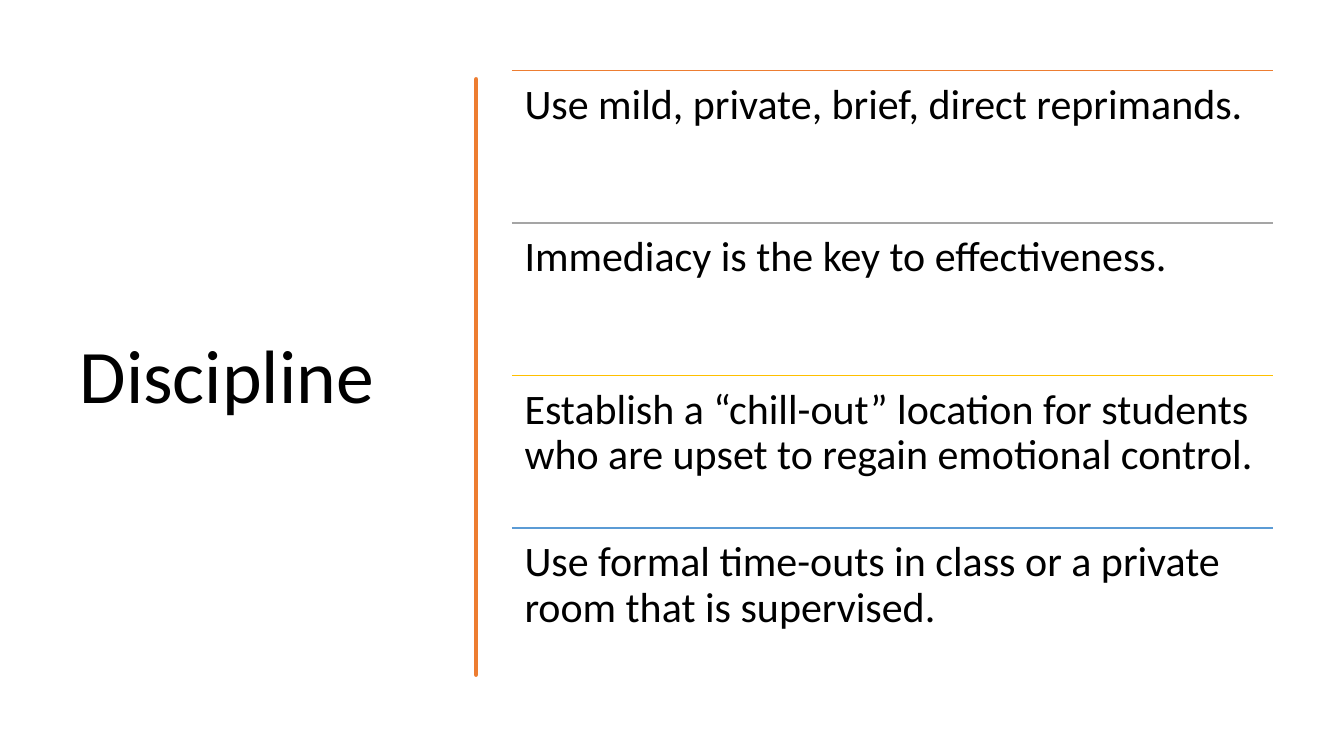
from lxml import etree
from pptx import Presentation
from pptx.dml.color import RGBColor
from pptx.enum.shapes import MSO_CONNECTOR
from pptx.enum.text import MSO_ANCHOR, MSO_AUTO_SIZE, PP_ALIGN
from pptx.oxml.ns import qn
from pptx.util import Cm, Pt

LEFT, TOP, MIDDLE = PP_ALIGN.LEFT, MSO_ANCHOR.TOP, MSO_ANCHOR.MIDDLE
STRAIGHT, NO_FIT = MSO_CONNECTOR.STRAIGHT, MSO_AUTO_SIZE.NONE

TITLE = "Discipline"
ORANGE = "ED7D31"
RULES = [
    (ORANGE, "Use mild, private, brief, direct reprimands."),
    ("A5A5A5", "Immediacy is the key to effectiveness."),
    ("FFC000", "Establish a “chill-out” location for students "
               "who are upset to regain emotional control."),
    ("5B9BD5", "Use formal time-outs in class or a private "
               "room that is supervised."),
]
ROW_X, ROW_Y, ROW_W, ROW_H = 12.9, 1.78, 19.18, 3.84

# Each bend in cm: two sideways pulls, their two heights, end height
STROKE_TOP, STROKE_END = 2.13, 17.17
RIGHT_X, LEFT_X = 12.06, 12.01
DOWN = [
    (0.05, 0.05, 2.59, 3.02, 3.71),
    (-0.05, 0.03, 4.39, 4.95, 5.74),
    (-0.03, 0, 6.53, 6.65, 7.47),
    (-0.03, 0.05, 8.26, 8.69, 9.04),
    (-0.05, 0.1, 9.4, 10.52, 11.07),
    (-0.1, -0.08, 11.61, 12.29, 12.95),
    (0.05, 0.05, 13.61, 14.33, 14.83),
    (-0.05, 0.03, 15.32, 16.51, STROKE_END),
]
UP = [
    (0.03, -0.05, 16.41, 16.36, 15.57),
    (0.03, 0.03, 14.81, 14.48, 14.15),
    (-0.03, -0.03, 13.82, 12.57, 12.12),
    (0, -0.05, 11.66, 11.3, 10.54),
    (0.03, -0.03, 9.8, 9.47, 8.51),
    (0.03, -0.03, 7.57, 7.14, 6.35),
    (0.03, 0.05, 5.54, 5.08, 4.6),
    (-0.08, 0.1, 4.14, 2.64, STROKE_TOP),
]
STEPS = 8


def color(code):
    return RGBColor.from_string(code)


def write(frame, text, size, anchor):
    frame.word_wrap = True
    frame.auto_size = NO_FIT
    frame.vertical_anchor = anchor
    para = frame.paragraphs[0]
    para.alignment = LEFT
    para.line_spacing = 0.9
    run = para.add_run()
    run.text = text
    run.font.name = "Calibri"
    run.font.size = Pt(size)
    run.font.color.rgb = color("000000")


def trace(x, y, bends):
    """Return points along the chained Bezier bends of one edge."""
    points = []
    for pull1, pull2, y1, y2, end in bends:
        for step in range(1, STEPS + 1):
            t = step / STEPS
            u = 1 - t
            a, b = 3 * u * u * t, 3 * u * t * t
            points.append((x + a * pull1 + b * pull2,
                           u ** 3 * y + a * y1 + b * y2 + t ** 3 * end))
        y = end
    return points


def add_stroke(shapes):
    pen = shapes.build_freeform(RIGHT_X, STROKE_TOP, scale=Cm(1))
    pen.add_line_segments(trace(RIGHT_X, STROKE_TOP, DOWN), close=False)
    pen.add_line_segments([(LEFT_X, STROKE_END)], close=False)
    pen.add_line_segments(trace(LEFT_X, STROKE_END, UP), close=True)
    stroke = pen.convert_to_shape()
    stroke.shadow.inherit = False
    stroke.fill.solid()
    stroke.fill.fore_color.rgb = color(ORANGE)
    stroke.line.color.rgb = color(ORANGE)
    stroke.line.width = Pt(3.25)


def add_rule(shapes, y, code, text):
    x, w = Cm(ROW_X), Cm(ROW_W)
    line = shapes.add_connector(STRAIGHT, x, Cm(y), x + w, Cm(y))
    line.line.color.rgb = color(code)
    line.line.width = Pt(1)
    etree.SubElement(line._element.spPr, qn("a:effectLst"))
    frame = shapes.add_textbox(x, Cm(y), w, Cm(ROW_H)).text_frame
    frame.margin_left = frame.margin_right = Cm(0.32)
    frame.margin_top = frame.margin_bottom = Cm(0.32)
    write(frame, text, 30, TOP)


def main():
    deck = Presentation()
    deck.slide_width, deck.slide_height = Cm(33.87), Cm(19.05)
    slide = deck.slides.add_slide(deck.slide_layouts[5])
    title = slide.shapes.title
    title.left, title.top = Cm(1.75), Cm(1.78)
    title.width, title.height = Cm(9.5), Cm(15.52)
    write(title.text_frame, TITLE, 54, MIDDLE)
    add_stroke(slide.shapes)
    group = slide.shapes.add_group_shape()
    for row, (code, text) in enumerate(RULES):
        add_rule(group.shapes, ROW_Y + row * ROW_H, code, text)
    deck.save("out.pptx")


if __name__ == "__main__":
    main()
